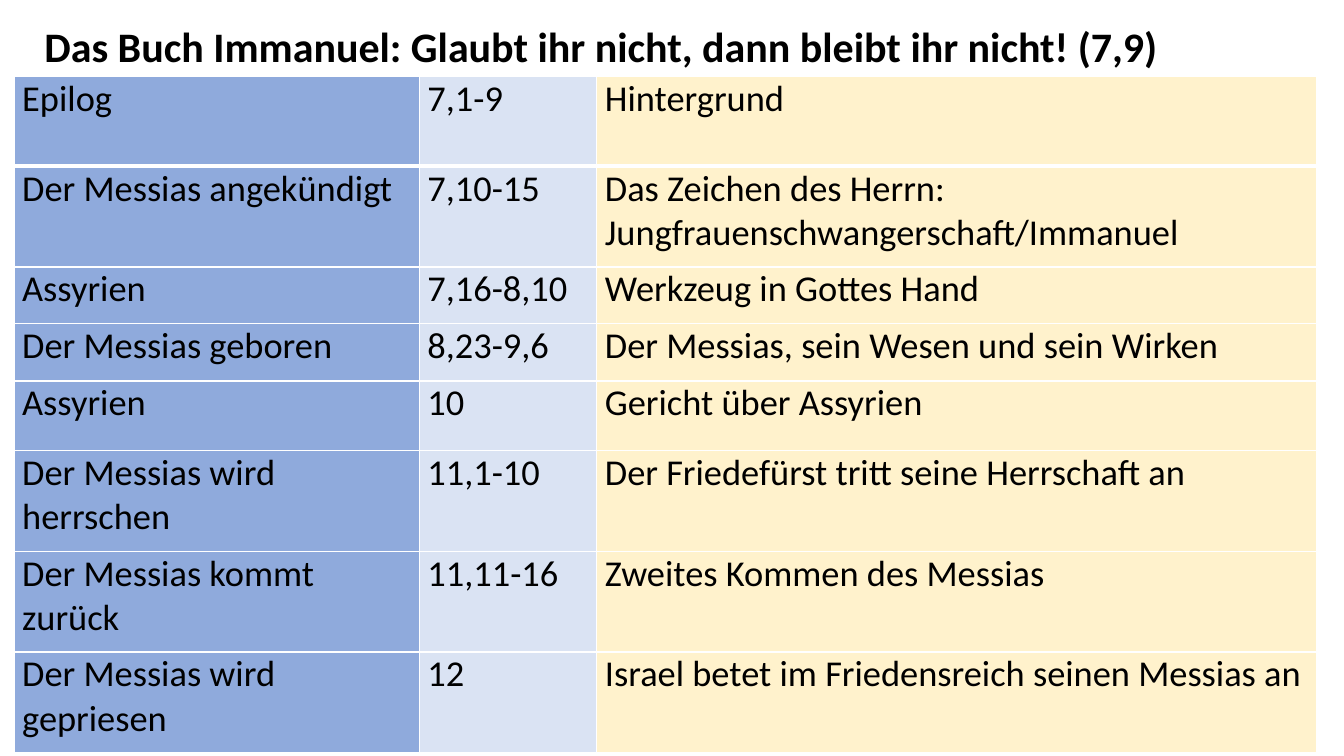
from lxml import etree
from pptx import Presentation
from pptx.dml.color import RGBColor
from pptx.enum.text import MSO_ANCHOR, PP_ALIGN
from pptx.oxml.ns import qn
from pptx.util import Inches, Pt

LEFT = PP_ALIGN.LEFT
TOP = MSO_ANCHOR.TOP
TITLE_ONLY_LAYOUT = 5

FONT = "Calibri"
BLACK = "000000"
WHITE = "FFFFFF"
COLUMN_FILLS = ("8FAADC", "DAE3F3", "FFF2CC")
COLUMN_WIDTHS = (4.02, 1.76, 7.14)
ROW_HEIGHTS = (0.89, 1, 0.56, 0.57, 0.69, 1, 1, 1)

TITLE = "Das Buch Immanuel: Glaubt ihr nicht, dann bleibt ihr nicht! (7,9)"
SECTIONS = (
    ("Epilog", "7,1-9", "Hintergrund"),
    ("Der Messias angekündigt", "7,10-15",
     "Das Zeichen des Herrn: Jungfrauenschwangerschaft/Immanuel"),
    ("Assyrien", "7,16-8,10", "Werkzeug in Gottes Hand"),
    ("Der Messias geboren", "8,23-9,6", "Der Messias, sein Wesen und sein Wirken"),
    ("Assyrien", "10", "Gericht über Assyrien"),
    ("Der Messias wird herrschen", "11,1-10", "Der Friedefürst tritt seine Herrschaft an"),
    ("Der Messias kommt zurück", "11,11-16", "Zweites Kommen des Messias"),
    ("Der Messias wird gepriesen", "12", "Israel betet im Friedensreich seinen Messias an"),
)


def color(hex_string):
    return RGBColor.from_string(hex_string)


def format_text(text_frame, size, bold=False):
    for paragraph in text_frame.paragraphs:
        paragraph.alignment = LEFT
        paragraph.line_spacing = 1.0
        for run in paragraph.runs:
            run.font.name = FONT
            run.font.size = Pt(size)
            run.font.bold = bold
            run.font.color.rgb = color(BLACK)


def set_title(slide):
    title = slide.shapes.title
    title.left, title.top = Inches(0.34), Inches(0.15)
    title.width, title.height = Inches(11.36), Inches(0.61)
    text_frame = title.text_frame
    text_frame.text = TITLE
    text_frame.word_wrap = False
    text_frame.vertical_anchor = TOP
    format_text(text_frame, 30, bold=True)


def add_border(cell, side, width):
    """Draw a white line on one side: L, R, T or B."""
    properties = cell._tc.get_or_add_tcPr()
    line = etree.SubElement(properties, qn(f"a:ln{side}"), w=str(Pt(width)))
    fill = etree.SubElement(line, qn("a:solidFill"))
    etree.SubElement(fill, qn("a:srgbClr"), val=WHITE)


def fill_cell(cell, text, fill, top_border, bottom_border):
    cell.text_frame.text = text
    cell.vertical_anchor = TOP
    cell.margin_left = cell.margin_right = Inches(0.08)
    cell.margin_top = cell.margin_bottom = 0
    format_text(cell.text_frame, 26)
    for side, width in zip("LRTB", (1, 1, top_border, bottom_border)):
        add_border(cell, side, width)
    cell.fill.solid()
    cell.fill.fore_color.rgb = color(fill)


def add_sections_table(slide):
    table = slide.shapes.add_table(
        len(SECTIONS), len(COLUMN_WIDTHS), Inches(0.14), Inches(0.76),
        Inches(sum(COLUMN_WIDTHS)), Inches(sum(ROW_HEIGHTS))).table
    for column, width in zip(table.columns, COLUMN_WIDTHS):
        column.width = Inches(width)
    for index, (row, height, texts) in enumerate(zip(table.rows, ROW_HEIGHTS, SECTIONS)):
        row.height = Inches(height)
        top_border = 3 if index == 1 else 1
        bottom_border = 3 if index == 0 else 1
        for cell, text, fill in zip(row.cells, texts, COLUMN_FILLS):
            fill_cell(cell, text, fill, top_border, bottom_border)


def main():
    presentation = Presentation()
    presentation.slide_width = Inches(13.33)
    presentation.slide_height = Inches(7.5)
    slide = presentation.slides.add_slide(presentation.slide_layouts[TITLE_ONLY_LAYOUT])
    set_title(slide)
    add_sections_table(slide)
    presentation.save("out.pptx")


if __name__ == "__main__":
    main()
